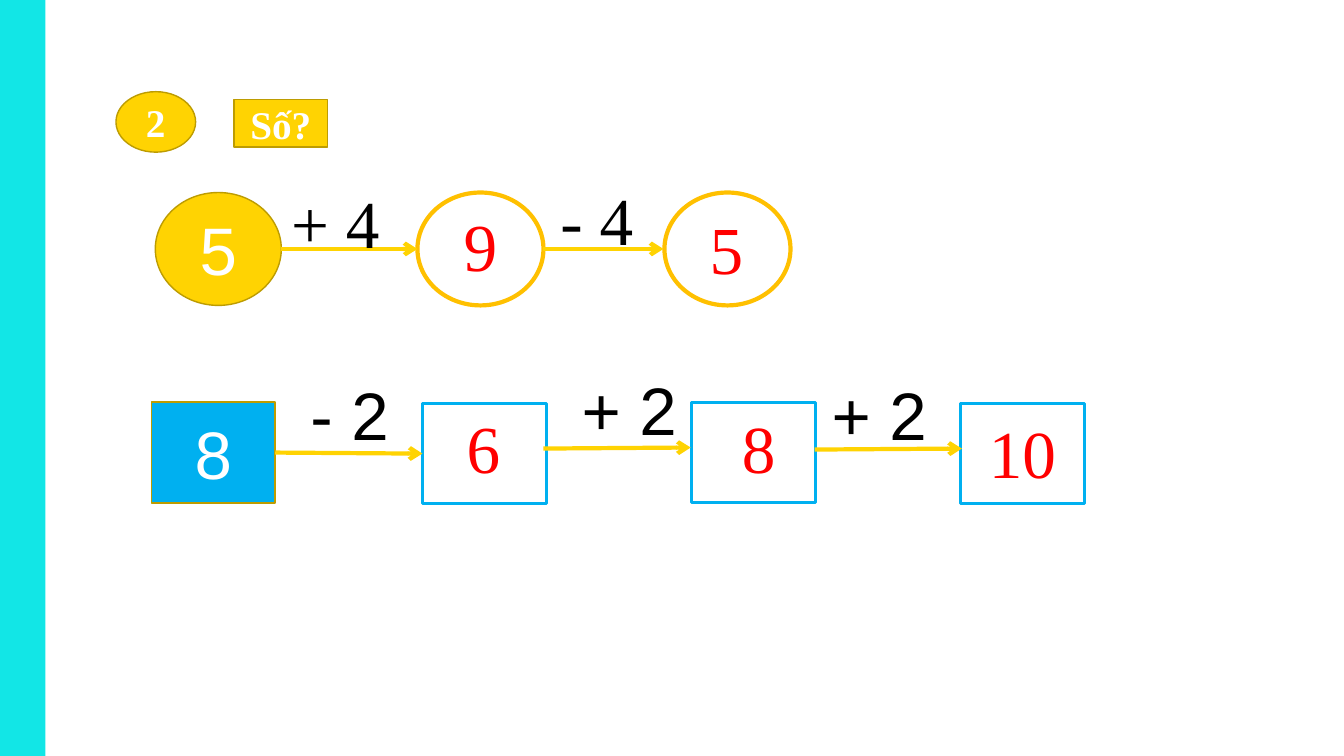
"""Builds the "Số?" exercise slide with two chains of sums."""
from lxml import etree
from pptx import Presentation
from pptx.dml.color import RGBColor
from pptx.enum import shapes, text
from pptx.oxml.ns import qn
from pptx.util import Inches, Pt

COLORS = {"band": "12E6E6", "yellow": "FFD302", "olive": "BD9C01", "amber": "FFC000",
          "blue": "00B0F0", "white": "FFFFFF", "red": "FF0000", "black": "000000"}
SERIF, SANS = "Times New Roman", "Arial"
OVAL, RECT = shapes.MSO_SHAPE.OVAL, shapes.MSO_SHAPE.RECTANGLE
LABEL_H, SIGN_W, ANSWER_W = 0.91, 1.55, 0.87

BADGES = [("2", OVAL, (1.15, 0.91, 0.79, 0.6)), ("Số?", RECT, (2.32, 0.99, 0.93, 0.47))]
CHAINS = [
    {"kind": OVAL, "size": (1.25, 1.12), "first": ("5", "yellow"),
     "empty": (None, "amber", 3), "sign_font": SERIF,
     "cells": [(1.54, 1.91), (4.14, 1.91), (6.59, 1.91)],
     "arrows": [(2.79, 2.47, 4.14, 2.47), (5.39, 2.47, 6.58, 2.47)],
     "signs": [("+ 4", 2.79, 1.75), ("- 4", 5.46, 1.72)],
     "answers": [("9", 4.5, 1.98), ("5", 6.94, 2.01)]},
    {"kind": RECT, "size": (1.23, 1), "first": ("8", "blue"),
     "empty": ("white", "blue", 2.25), "sign_font": SANS,
     "cells": [(1.5, 3.99), (4.19, 4), (6.86, 3.99), (9.53, 4)],
     "arrows": [(2.73, 4.49, 4.19, 4.48), (5.39, 4.45, 6.85, 4.44),
                (8.08, 4.46, 9.54, 4.45)],
     "signs": [("- 2", 2.98, 3.65), ("+ 2", 5.67, 3.6), ("+ 2", 8.15, 3.65)],
     "answers": [("6", 4.53, 3.98), ("8", 7.26, 3.98), ("10", 9.71, 4.03)]},
]


def rgb(name):
    return RGBColor.from_string(COLORS[name])


def write(sp, words, size, font, color, bold=False):
    p = sp.text_frame.paragraphs[0]
    p.text = words
    p.font.size, p.font.name, p.font.bold = Pt(size), font, bold
    p.font.color.rgb = rgb(color)
    return p


def add_shape(s, kind, box, fill, line=None, width=1):
    sp = s.shapes.add_shape(kind, *map(Inches, box))
    sp.shadow.inherit = False
    if fill:
        sp.fill.solid()
        sp.fill.fore_color.rgb = rgb(fill)
    else:
        sp.fill.background()
    if line:
        sp.line.color.rgb = rgb(line)
        sp.line.width = Pt(width)
    else:
        sp.line.fill.background()
    return sp


def add_filled(s, kind, box, fill, words, size, font, bold=False):
    sp = add_shape(s, kind, box, fill, "olive")
    sp.text_frame.vertical_anchor = text.MSO_ANCHOR.MIDDLE
    p = write(sp, words, size, font, "white", bold)
    p.alignment = text.PP_ALIGN.CENTER
    return sp


def add_label(s, words, left, top, width, font, color):
    sp = s.shapes.add_textbox(*map(Inches, (left, top, width, LABEL_H)))
    sp.text_frame.word_wrap = True
    sp.text_frame.auto_size = text.MSO_AUTO_SIZE.SHAPE_TO_FIT_TEXT
    write(sp, words, 48, font, color)


def add_arrow(s, ends):
    cx = s.shapes.add_connector(shapes.MSO_CONNECTOR.STRAIGHT, *map(Inches, ends))
    cx.line.color.rgb = rgb("yellow")
    cx.line.width = Pt(3)
    etree.SubElement(cx.line._get_or_add_ln(), qn("a:tailEnd"), type="arrow")
    etree.SubElement(cx._element.spPr, qn("a:effectLst"))
    return cx


def add_chain(s, chain):
    first, fill = chain["first"]
    start, *rest = chain["cells"]
    cells = [add_filled(s, chain["kind"], start + chain["size"], fill, first, 48, SANS)]
    for spot in rest:
        cells.append(add_shape(s, chain["kind"], spot + chain["size"], *chain["empty"]))
    arrows = [add_arrow(s, ends) for ends in chain["arrows"]]
    if chain["kind"] == RECT:
        arrows[0].begin_connect(cells[0], 3)
        arrows[0].end_connect(cells[1], 1)
    for words, left, top in chain["signs"]:
        add_label(s, words, left, top, SIGN_W, chain["sign_font"], "black")
    for words, left, top in chain["answers"]:
        add_label(s, words, left, top, ANSWER_W, SERIF, "red")


def main():
    prs = Presentation()
    prs.slide_width, prs.slide_height = Inches(13.33), Inches(7.5)
    s = prs.slides.add_slide(prs.slide_layouts[6])
    add_shape(s, RECT, (0, 0, 0.45, 7.5), "band")
    for words, kind, box in BADGES:
        add_filled(s, kind, box, "yellow", words, 28, SERIF, bold=True)
    for chain in CHAINS:
        add_chain(s, chain)
    prs.save("out.pptx")


if __name__ == "__main__":
    main()
